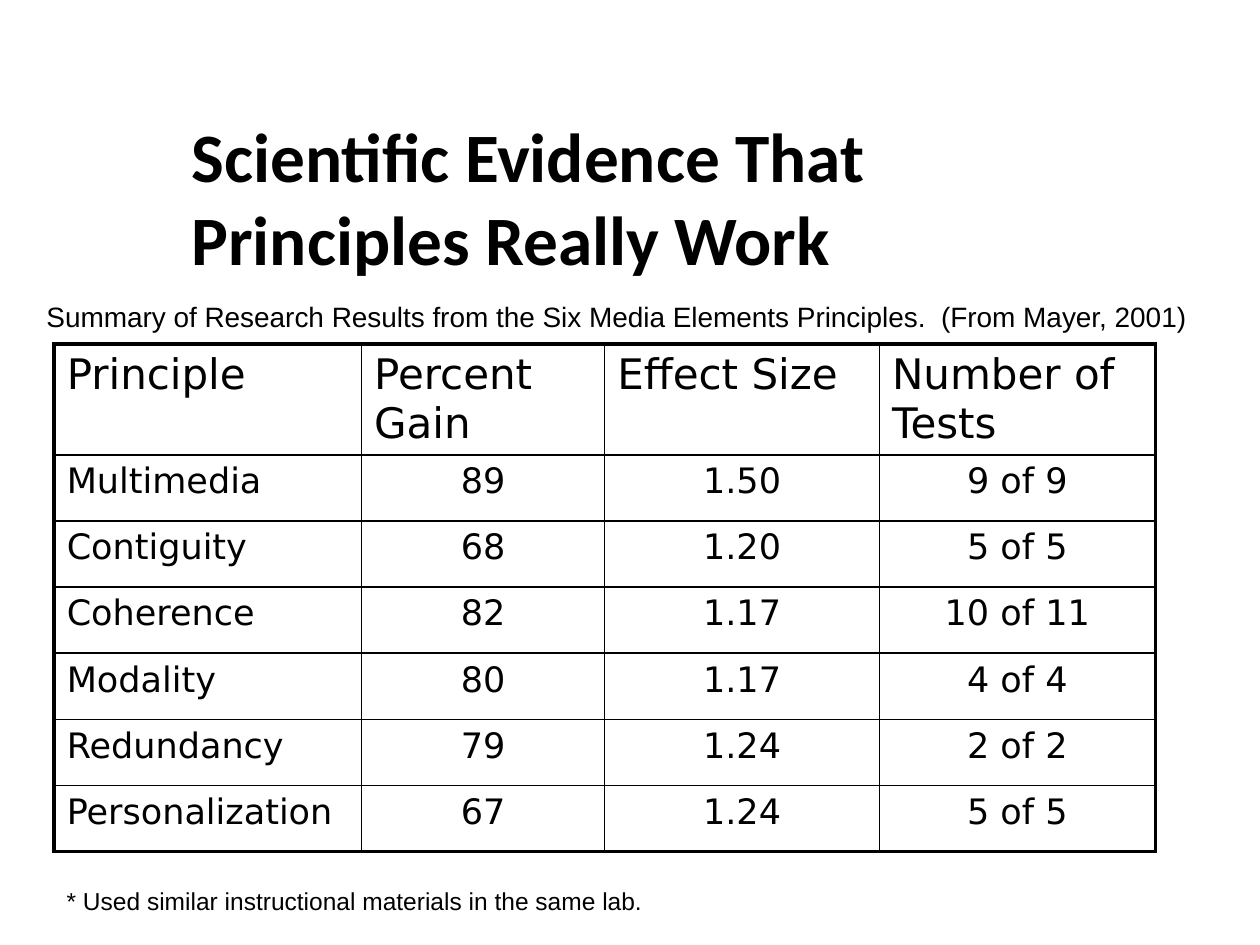
from dataclasses import dataclass

from lxml import etree
from pptx import Presentation, util as u
from pptx.dml.color import RGBColor
from pptx.enum import text
from pptx.oxml.ns import qn


@dataclass(frozen=True)
class Theme:
    ink: str = "000000"
    paper: str = "FFFFFF"
    title_font: str = "Calibri"
    table_font: str = "DejaVu Sans"
    note_font: str = "Arial"
    title: float = 39.6
    header: float = 24
    body: float = 20
    caption: float = 16
    footnote: float = 14
    frame: float = 2.25
    rule: float = 1


class SlideBuilder:
    def __init__(self, s, theme):
        self.s, self.theme = s, theme
        s.background.fill.solid()
        s.background.fill.fore_color.rgb = RGBColor.from_string(theme.paper)

    def style(self, p, font, size, bold=False, align=text.PP_ALIGN.LEFT):
        p.alignment = align
        for r in p.runs:
            r.font.name, r.font.size, r.font.bold = font, u.Pt(size), bold
            r.font.color.rgb = RGBColor.from_string(self.theme.ink)

    def title(self, words, box):
        sp = self.s.shapes.title
        sp.left, sp.top, sp.width, sp.height = map(u.Inches, box)
        tf = sp.text_frame
        tf.text = words
        tf.word_wrap = True
        tf.auto_size = text.MSO_AUTO_SIZE.NONE
        tf.vertical_anchor = text.MSO_ANCHOR.MIDDLE
        self.style(tf.paragraphs[0], self.theme.title_font, self.theme.title, bold=True)

    def note(self, words, box, size):
        tf = self.s.shapes.add_textbox(*map(u.Inches, box)).text_frame
        tf.text = words
        tf.word_wrap = True
        tf.auto_size = text.MSO_AUTO_SIZE.SHAPE_TO_FIT_TEXT
        self.style(tf.paragraphs[0], self.theme.note_font, size)

    def border(self, cell, side, width):
        ln = etree.SubElement(cell._tc.get_or_add_tcPr(), qn(f"a:ln{side}"), w=str(u.Pt(width)))
        fill = etree.SubElement(ln, qn("a:solidFill"))
        etree.SubElement(fill, qn("a:srgbClr"), val=self.theme.ink)

    def table(self, data, left, top, widths, heights):
        t = self.theme
        last_row, last_col = len(heights) - 1, len(widths) - 1
        box = left, top, sum(widths), sum(heights)
        tbl = self.s.shapes.add_table(len(heights), len(widths), *map(u.Inches, box)).table
        tbl.first_row = tbl.horz_banding = False
        for col, width in zip(tbl.columns, widths):
            col.width = u.Inches(width)
        for row, height in zip(tbl.rows, heights):
            row.height = u.Inches(height)
        for i, values in enumerate(data):
            for j, value in enumerate(values):
                cell = tbl.cell(i, j)
                cell.text_frame.text = value
                centred = i > 0 and j > 0
                self.style(cell.text_frame.paragraphs[0], t.table_font,
                           t.body if i else t.header,
                           align=text.PP_ALIGN.CENTER if centred else text.PP_ALIGN.LEFT)
                # Heavy outer frame, thin inner rules; borders precede the fill
                outer = {"L": j == 0, "R": j == last_col, "T": i == 0, "B": i == last_row}
                for side, on_frame in outer.items():
                    self.border(cell, side, t.frame if on_frame else t.rule)
                cell.fill.background()


RESULTS = [
    ("Principle", "Percent Gain", "Effect Size", "Number of Tests"),
    ("Multimedia", "89", "1.50", "9 of 9"),
    ("Contiguity", "68", "1.20", "5 of 5"),
    ("Coherence", "82", "1.17", "10 of 11"),
    ("Modality", "80", "1.17", "4 of 4"),
    ("Redundancy", "79", "1.24", "2 of 2"),
    ("Personalization", "67", "1.24", "5 of 5"),
]


def main():
    prs = Presentation()
    prs.slide_width, prs.slide_height = u.Inches(10), u.Inches(7.5)
    theme = Theme()
    page = SlideBuilder(prs.slides.add_slide(prs.slide_layouts[5]), theme)

    # Heading
    page.title("Scientific Evidence That Principles Really Work", (1.42, 1.15, 7.75, 0.81))

    # Results table
    heights = [0.88] + [0.525] * (len(RESULTS) - 1)
    page.table(RESULTS, 0.43, 2.73, [2.44, 1.93, 2.18, 2.19], heights)

    # Caption and footnote
    page.note("Summary of Research Results from the Six Media Elements Principles.  "
              "(From Mayer, 2001)", (0.27, 2.33, 9.45, 0.37), theme.caption)
    page.note("* Used similar instructional materials in the same lab.",
              (0.43, 6.98, 8.82, 0.33), theme.footnote)

    prs.save("out.pptx")


if __name__ == "__main__":
    main()
